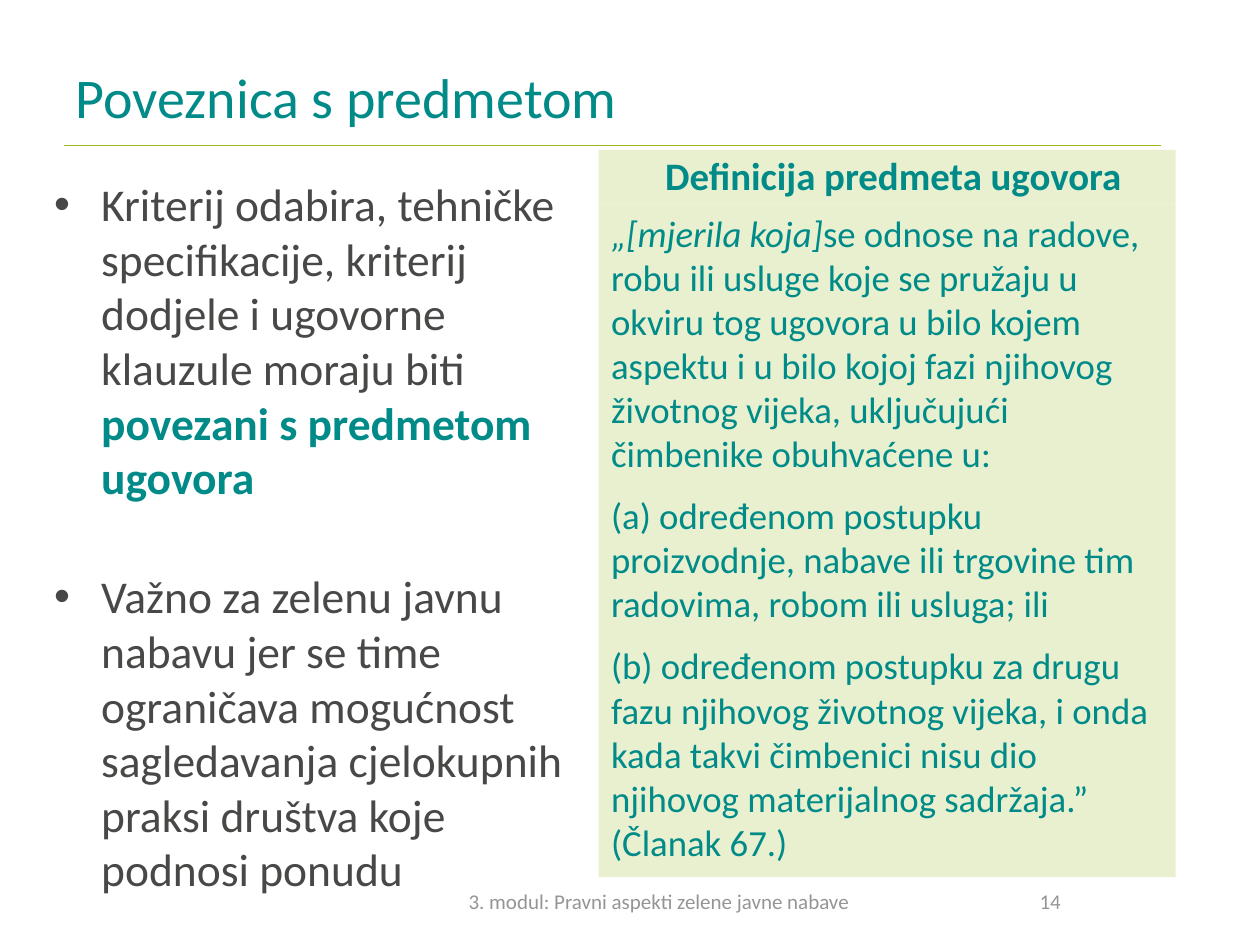
from lxml.etree import SubElement
from pptx import Presentation
from pptx.dml.color import RGBColor
from pptx.enum.shapes import MSO_CONNECTOR, MSO_SHAPE
from pptx.enum.text import MSO_ANCHOR, PP_ALIGN
from pptx.oxml.ns import qn
from pptx.util import Cm, Pt

COLORS = {"teal": "008A88", "dark": "484847", "grey": "959595",
          "panel": "E8F0D0", "rule": "9BB51B"}
FONT = "Calibri"

# Each paragraph is a list of runs: (text, colour, style)
TITLE = [[("Poveznica s predmetom", "teal", "")]]
BULLETS = [
    [("Kriterij odabira, tehničke specifikacije, kriterij dodjele i ugovorne "
      "klauzule moraju biti ", "dark", ""),
     ("povezani s predmetom ugovora", "teal", "bold")],
    [("Važno za zelenu javnu nabavu jer se time ograničava mogućnost "
      "sagledavanja cjelokupnih praksi društva koje podnosi ponudu", "dark", "")],
]
HEADING = [[("Definicija predmeta ugovora", "teal", "bold")]]
DEFINITION = [
    [("„[mjerila koja]", "teal", "italic"),
     ("se odnose na radove, robu ili usluge koje se pružaju u okviru tog ugovora "
      "u bilo kojem aspektu i u bilo kojoj fazi njihovog životnog vijeka, "
      "uključujući čimbenike obuhvaćene u:", "teal", "")],
    [("(a) određenom postupku proizvodnje, nabave ili trgovine tim radovima, "
      "robom ili usluga; ili", "teal", "")],
    [("(b) određenom postupku za drugu fazu njihovog životnog vijeka, i onda kada "
      "takvi čimbenici nisu dio njihovog materijalnog sadržaja.” (Članak 67.)",
      "teal", "")],
]
FOOTER = [[("3. modul: Pravni aspekti zelene javne nabave", "grey", "")]]
PAGE_NUMBER = [[("14", "grey", "")]]

PANEL_LEFT, PANEL_TOP, PANEL_WIDTH = 12.07, 3.02, 11.63
HEADING_HEIGHT, DEFINITION_HEIGHT = 1.1, 13.56
FOOTER_TOP, FOOTER_HEIGHT = 17.65, 1.02


def rgb(name):
    return RGBColor.from_string(COLORS[name])


def indent(para, margin, first=0, bullet=None):
    properties = para._p.get_or_add_pPr()
    properties.set("marL", str(Cm(margin)))
    properties.set("indent", str(Cm(first)))
    if bullet:
        SubElement(properties, qn("a:buFont")).set("typeface", "Arial")
        SubElement(properties, qn("a:buChar")).set("char", bullet)


def add_text(page, area, paragraphs, size, anchor=MSO_ANCHOR.TOP,
             align=PP_ALIGN.LEFT, before=0, after=0, fill=None):
    """Add a text box, or a filled rectangle when a fill is named."""
    place = [Cm(length) for length in area]
    if fill:
        box = page.shapes.add_shape(MSO_SHAPE.RECTANGLE, *place)
        box.shadow.inherit = False
        box.fill.solid()
        box.fill.fore_color.rgb = rgb(fill)
        box.line.fill.background()
    else:
        box = page.shapes.add_textbox(*place)
    frame = box.text_frame
    frame.word_wrap = True
    frame.vertical_anchor = anchor
    for number, runs in enumerate(paragraphs):
        para = frame.add_paragraph() if number else frame.paragraphs[0]
        para.alignment = align
        para.space_before = Pt(before if number else 0)
        para.space_after = Pt(after)
        for text, color, style in runs:
            span = para.add_run()
            span.text = text
            span.font.name = FONT
            span.font.size = Pt(size)
            span.font.color.rgb = rgb(color)
            span.font.bold = style == "bold"
            span.font.italic = style == "italic"
    return frame.paragraphs


def add_rule(page, left, right, y):
    rule = page.shapes.add_connector(
        MSO_CONNECTOR.STRAIGHT, Cm(left), Cm(y), Cm(right), Cm(y))
    rule.line.color.rgb = rgb("rule")
    rule.line.width = Pt(0.75)
    SubElement(rule._element.spPr, qn("a:effectLst"))


def main():
    deck = Presentation()
    deck.slide_width, deck.slide_height = Cm(25.4), Cm(19.05)
    page = deck.slides.add_slide(deck.slide_layouts[6])

    add_rule(page, 1.3, 23.4, 2.93)
    add_text(page, (1.27, 0.76, 22.23, 2.36), TITLE, 32, MSO_ANCHOR.MIDDLE)

    for para in add_text(page, (0.84, 3.43, 11.23, 13.69), BULLETS, 26, before=37):
        indent(para, 0.95, -0.95, "•")

    heading = add_text(page, (PANEL_LEFT, PANEL_TOP, PANEL_WIDTH, HEADING_HEIGHT),
                       HEADING, 22.2, MSO_ANCHOR.BOTTOM, PP_ALIGN.CENTER,
                       fill="panel")
    indent(heading[0], 0.25)
    add_text(page, (PANEL_LEFT, PANEL_TOP + HEADING_HEIGHT, PANEL_WIDTH,
                    DEFINITION_HEIGHT),
             DEFINITION, 21, before=4.2, after=6, fill="panel")

    for left, width, text in ((7.29, 11.99, FOOTER), (18.21, 5.92, PAGE_NUMBER)):
        add_text(page, (left, FOOTER_TOP, width, FOOTER_HEIGHT), text, 12,
                 MSO_ANCHOR.MIDDLE, PP_ALIGN.CENTER)

    deck.save("out.pptx")


if __name__ == "__main__":
    main()
